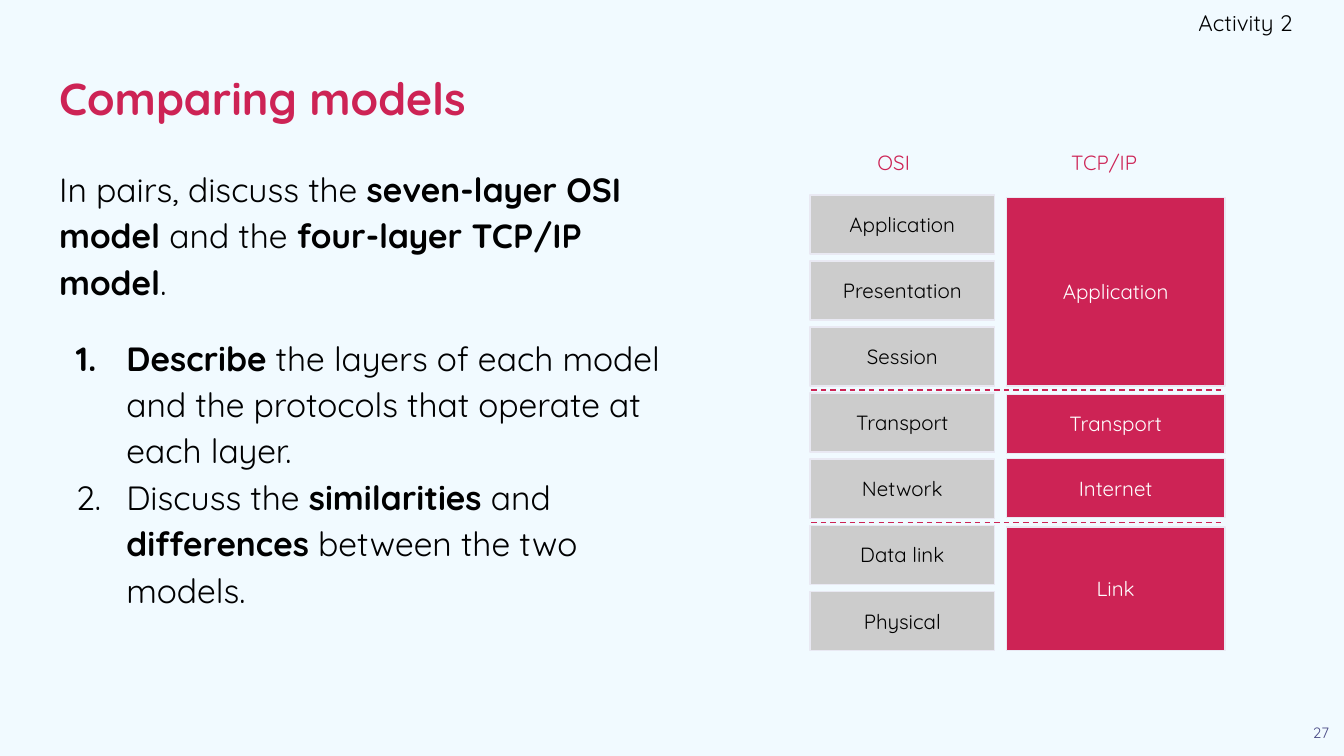
from lxml import etree
from pptx import Presentation
from pptx import util as u
from pptx.dml.color import RGBColor
from pptx.enum import dml, shapes, text
from pptx.oxml.ns import qn

FONT = "Quicksand"
CRIMSON, GREY, BLACK, WHITE = "CD2355", "CCCCCC", "000000", "FFFFFF"
EDGE, INDIGO, PALE = "E9E9F3", "494985", "F1FAFF"
LEFT, CENTER, RIGHT = text.PP_ALIGN.LEFT, text.PP_ALIGN.CENTER, text.PP_ALIGN.RIGHT
TOP, MIDDLE = text.MSO_ANCHOR.TOP, text.MSO_ANCHOR.MIDDLE


def color(value):
    return RGBColor.from_string(value)


def write(box, place, words, size, ink, align=LEFT, anchor=MIDDLE, bold=False):
    box.left, box.top, box.width, box.height = [u.Pt(n) for n in place]
    frame = box.text_frame
    frame.text = words
    frame.word_wrap = True
    frame.auto_size = text.MSO_AUTO_SIZE.NONE
    frame.vertical_anchor = anchor
    frame.margin_left = frame.margin_right = u.Pt(7.2)
    frame.margin_top = frame.margin_bottom = u.Pt(7.2)
    para = frame.paragraphs[0]
    para.alignment = align
    for span in para.runs:
        span.font.name, span.font.size, span.font.bold = FONT, u.Pt(size), bold
        span.font.color.rgb = color(ink)
    return frame


deck = Presentation()
deck.slide_width, deck.slide_height = u.Pt(720), u.Pt(405)
page = deck.slides.add_slide(deck.slide_layouts[1])
page.background.fill.solid()
page.background.fill.fore_color.rgb = color(PALE)

write(page.shapes.title, (24.5, 24.5, 671, 56), "Comparing models", 24, CRIMSON, bold=True)

body = page.placeholders[1]
frame = write(body, (24.5, 80, 340, 300), "", 18, BLACK, anchor=TOP)
paragraphs = [
    [("In pairs, discuss the ", False), ("seven-layer OSI model", True), (" and the ", False),
     ("four-layer TCP/IP model", True), (".", False)],
    [("Describe", True),
     (" the layers of each model and the protocols that operate at each layer.", False)],
    [("Discuss the ", False), ("similarities", True), (" and ", False),
     ("differences", True), (" between the two models.", False)],
]
for index, spans in enumerate(paragraphs):
    para = frame.paragraphs[0] if index == 0 else frame.add_paragraph()
    para.alignment = LEFT
    para.line_spacing = 1.15
    para.space_before = u.Pt(16 if index == 1 else 0)
    para.space_after = u.Pt(0)
    for words, bold in spans:
        span = para.add_run()
        span.text = words
        span.font.name, span.font.size, span.font.bold = FONT, u.Pt(18), bold
        span.font.color.rgb = color(BLACK)
    props = para._p.get_or_add_pPr()
    props.set("marL", str(u.Pt(36 if index else 0)))
    props.set("indent", str(u.Pt(-27 if index else 0)))
    if index:
        etree.SubElement(etree.SubElement(props, qn("a:buClr")), qn("a:srgbClr"), val=BLACK)
        etree.SubElement(props, qn("a:buFont"), typeface=FONT)
        etree.SubElement(props, qn("a:buAutoNum"), type="arabicPeriod")
    else:
        etree.SubElement(props, qn("a:buNone"))

labels = [
    ("27", (695.5, 380.2, 24.5, 24.5), 8, INDIGO, CENTER, TOP),
    ("Activity 2", (538.5, 0, 154, 24.5), 12, BLACK, RIGHT, MIDDLE),
    ("OSI", (463, 71.3, 43.2, 28), 11, CRIMSON, LEFT, TOP),
    ("TCP/IP", (566.8, 71.3, 62, 28), 11, CRIMSON, LEFT, TOP),
]
for words, place, size, ink, align, anchor in labels:
    box = page.shapes.add_textbox(0, 0, 0, 0)
    frame = write(box, place, words, size, ink, align, anchor)
    if align == RIGHT:
        frame.margin_right = 0
    elif align == LEFT:
        frame.paragraphs[0].line_spacing = 1.15

osi_layers = ["Application", "Presentation", "Session", "Transport", "Network", "Data link", "Physical"]
tcp_layers = [("Application", 105.8, 101), ("Transport", 211.2, 31.7),
              ("Internet", 245.6, 31.7), ("Link", 282.3, 66.2)]
blocks = [(name, (434, 104.4 + 35.4 * row, 98.8, 31.7), GREY, BLACK)
          for row, name in enumerate(osi_layers)]
blocks += [(name, (539.2, top, 117, height), CRIMSON, WHITE) for name, top, height in tcp_layers]
for name, place, fill, ink in blocks:
    block = page.shapes.add_shape(shapes.MSO_SHAPE.RECTANGLE, 0, 0, 0, 0)
    write(block, place, name, 11, ink, CENTER)
    block.shadow.inherit = False
    block.fill.solid()
    block.fill.fore_color.rgb = color(fill)
    block.line.color.rgb = color(EDGE)
    block.line.width = u.Pt(0.75)

for y in (209, 280):
    divider = page.shapes.add_connector(
        shapes.MSO_CONNECTOR.STRAIGHT, u.Pt(434.6), u.Pt(y), u.Pt(656), u.Pt(y))
    divider.line.color.rgb = color(CRIMSON)
    divider.line.width = u.Pt(0.75)
    divider.line.dash_style = dml.MSO_LINE.DASH
    etree.SubElement(divider._element.spPr, qn("a:effectLst"))

deck.save("out.pptx")
